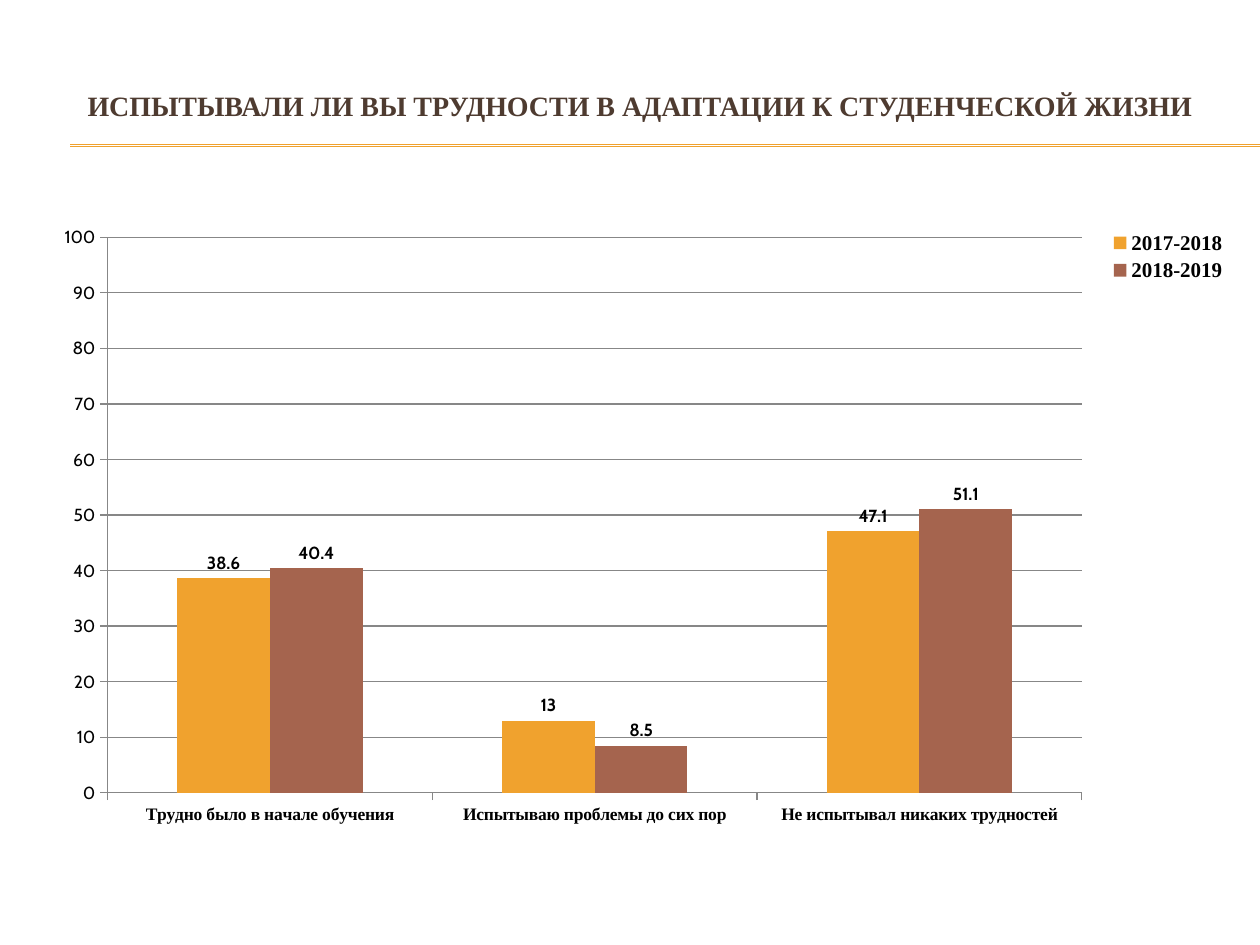
from lxml import etree
from pptx import Presentation
from pptx.chart.data import CategoryChartData
from pptx.dml.color import RGBColor
from pptx.enum.chart import (XL_CHART_TYPE, XL_LABEL_POSITION,
                             XL_LEGEND_POSITION, XL_TICK_MARK)
from pptx.enum.shapes import MSO_CONNECTOR
from pptx.enum.text import MSO_ANCHOR, PP_ALIGN
from pptx.oxml.ns import qn
from pptx.util import Cm, Pt

COLUMNS = XL_CHART_TYPE.COLUMN_CLUSTERED
ABOVE = XL_LABEL_POSITION.OUTSIDE_END
RIGHT = XL_LEGEND_POSITION.RIGHT
OUT = XL_TICK_MARK.OUTSIDE
STRAIGHT = MSO_CONNECTOR.STRAIGHT
MIDDLE = MSO_ANCHOR.MIDDLE
CENTER = PP_ALIGN.CENTER

SERIF, SANS = "Times New Roman", "Cabin"
COLORS = {"gold": "F0A22E", "rust": "A5644E", "brown": "4E3B30",
          "black": "000000", "gray": "878787"}
LEFT, WIDTH = 0.84, 24.13

CATS = ["Трудно было в начале обучения", "Испытываю проблемы до сих пор",
        "Не испытывал никаких трудностей"]
YEARS = [("2017-2018", (38.6, 13, 47.1), "gold"),
         ("2018-2019", (40.4, 8.5, 51.1), "rust")]


def color(name):
    return RGBColor.from_string(COLORS[name])


def set_font(font, size, face, bold=False, tint="black"):
    font.size, font.name, font.bold = Pt(size), face, bold
    font.color.rgb = color(tint)


def add_rule(slide, y):
    rule = slide.shapes.add_connector(STRAIGHT, Cm(1.42), Cm(y), Cm(25.4), Cm(y))
    rule.line.color.rgb = color("gold")
    rule.line.width = Pt(0.75)
    etree.SubElement(rule._element.spPr, qn("a:effectLst"))


def add_title(slide, text):
    box = slide.shapes.add_textbox(Cm(LEFT), Cm(1.27), Cm(WIDTH), Cm(2.34))
    frame = box.text_frame
    frame.word_wrap = True
    frame.vertical_anchor = MIDDLE
    frame.margin_bottom = Cm(0.75)
    para = frame.paragraphs[0]
    para.text = text
    para.alignment = CENTER
    set_font(para.font, 16, SERIF, True, "brown")


def place(part, index, **spots):
    """Fix a chart part at fractions of the chart's size."""
    for old in part.findall(qn("c:layout")):
        part.remove(old)
    layout = etree.Element(qn("c:layout"))
    manual = etree.SubElement(layout, qn("c:manualLayout"))
    for key, val in spots.items():
        etree.SubElement(manual, qn("c:" + key)).set("val", str(val))
    part.insert(index, layout)


def style_axis(axis, face, bold=False):
    axis.major_tick_mark = OUT
    axis.format.line.color.rgb = color("gray")
    set_font(axis.tick_labels.font, 10, face, bold)


def add_chart(slide):
    data = CategoryChartData()
    data.categories = CATS
    for name, vals, _ in YEARS:
        data.add_series(name, vals)
    chart = slide.shapes.add_chart(COLUMNS, Cm(LEFT), Cm(4.32), Cm(WIDTH),
                                   Cm(12.57), data).chart
    set_font(chart.font, 10, SANS)
    chart.has_title = False

    # Axes
    style_axis(chart.category_axis, SERIF, True)
    axis = chart.value_axis
    style_axis(axis, SANS)
    axis.minimum_scale, axis.maximum_scale, axis.major_unit = 0, 100, 10
    axis.has_major_gridlines = True
    axis.major_gridlines.format.line.color.rgb = color("gray")

    # Columns and their values
    plot = chart.plots[0]
    plot.gap_width, plot.overlap = 150, 0
    plot.vary_by_categories = False
    for series, (_, _, tint) in zip(plot.series, YEARS):
        series.format.fill.solid()
        series.format.fill.fore_color.rgb = color(tint)
        labels = series.data_labels
        labels.show_value = True
        labels.position = ABOVE
        set_font(labels.font, 10, SANS, True)

    # Legend in the upper right corner
    chart.has_legend = True
    legend = chart.legend
    legend.position = RIGHT
    legend.include_in_layout = False
    set_font(legend.font, 12, SERIF, True)
    place(legend._element, 1, xMode="edge", yMode="edge", x=0.89, y=0.02)
    area = chart._chartSpace.chart.plotArea
    place(area, 0, layoutTarget="inner", xMode="edge", yMode="edge",
          x=0.055, y=0.037, w=0.814, h=0.891)


def main():
    deck = Presentation()
    deck.slide_width, deck.slide_height = Cm(25.4), Cm(19.05)
    slide = deck.slides.add_slide(deck.slide_layouts[6])
    for y in (2.92, 2.95):
        add_rule(slide, y)
    add_title(slide, "ИСПЫТЫВАЛИ ЛИ ВЫ ТРУДНОСТИ В АДАПТАЦИИ К СТУДЕНЧЕСКОЙ ЖИЗНИ")
    add_chart(slide)
    deck.save("out.pptx")


if __name__ == "__main__":
    main()
